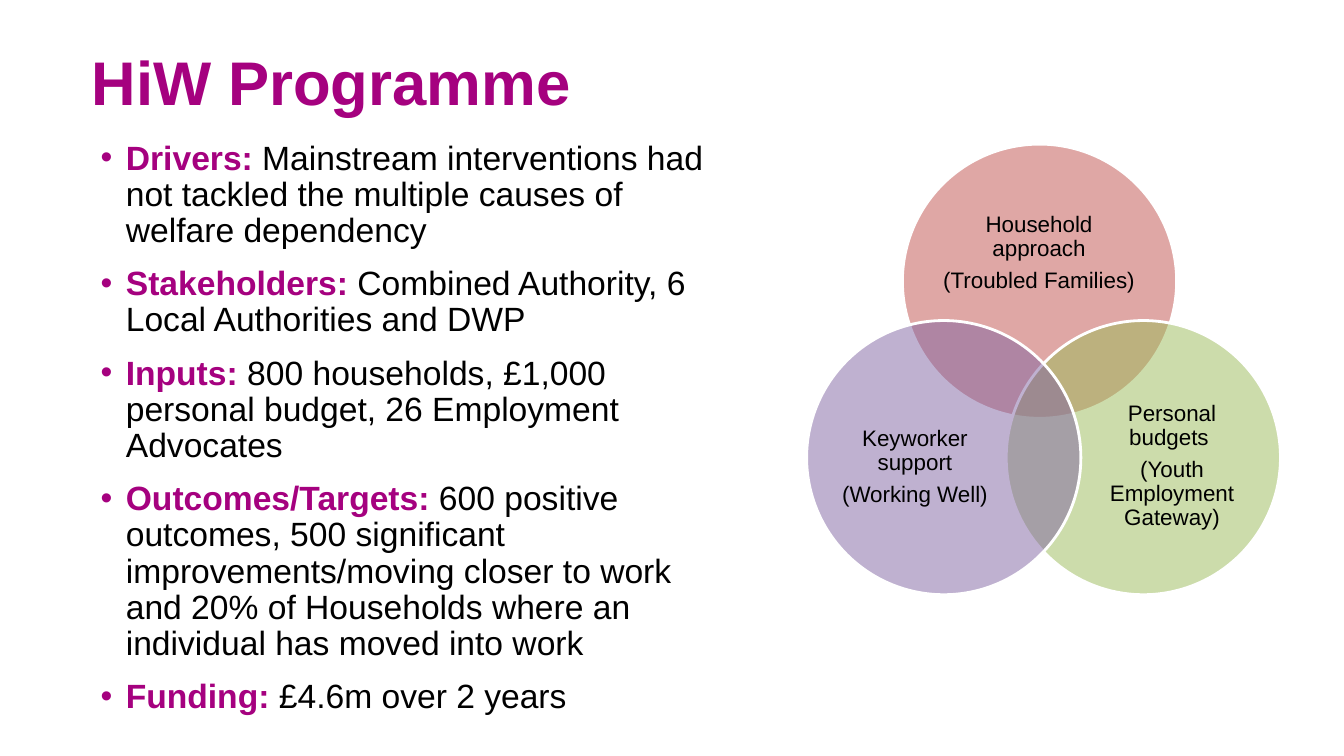
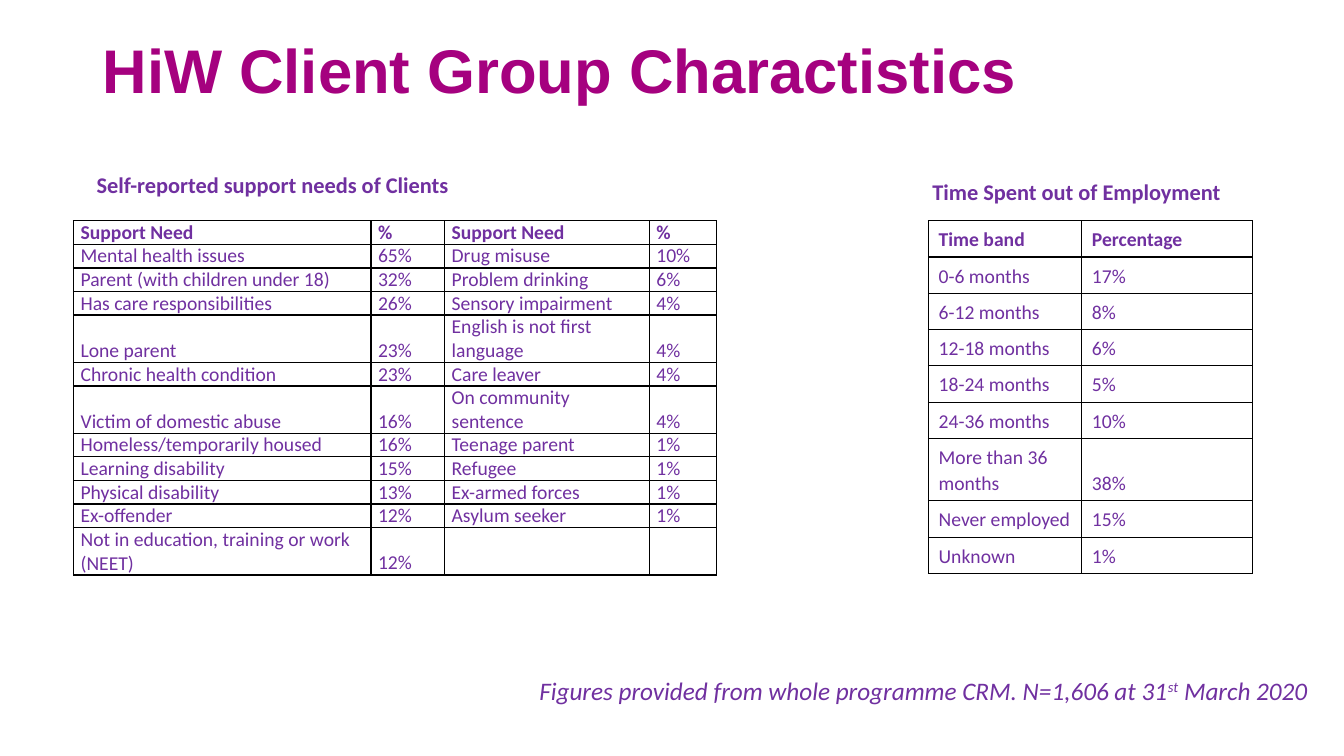
from dataclasses import dataclass

from lxml import etree
from pptx import Presentation
from pptx.dml.color import RGBColor
from pptx.enum.shapes import MSO_SHAPE
from pptx.enum.text import MSO_ANCHOR, PP_ALIGN
from pptx.oxml.ns import qn
from pptx.util import Inches, Pt

OVAL = MSO_SHAPE.OVAL
TOP, MIDDLE, BOTTOM = MSO_ANCHOR.TOP, MSO_ANCHOR.MIDDLE, MSO_ANCHOR.BOTTOM
LEFT, CENTER = PP_ALIGN.LEFT, PP_ALIGN.CENTER


@dataclass(frozen=True)
class Theme:
    magenta: str = "A5017F"
    purple: str = "7030A0"
    black: str = "000000"
    white: str = "FFFFFF"
    red_circle: str = "C0504D"
    green_circle: str = "9BBB59"
    violet_circle: str = "8064A2"
    main_font: str = "Arial"
    data_font: str = "Calibri"
    title_size: int = 44
    body_size: int = 24
    note_size: int = 18
    label_size: int = 16
    cell_size: int = 14


THEME = Theme()

PROGRAMME_POINTS = [
    ("Drivers: ", "Mainstream interventions had not tackled the multiple causes "
                  "of welfare dependency"),
    ("Stakeholders: ", "Combined Authority, 6 Local Authorities and DWP"),
    ("Inputs: ", "800 households, £1,000 personal budget, 26 Employment Advocates"),
    ("Outcomes/Targets: ", "600 positive outcomes, 500 significant improvements/moving "
                           "closer to work and 20% of Households where an individual "
                           "has moved into work"),
    ("Funding: ", "£4.6m over 2 years"),
]

CIRCLE_SIZE = 2.72
# Circle left and top, colour, label box, label paragraphs
VENN = [
    (8.95, 1.43, THEME.red_circle, (9.31, 1.9, 1.99, 1.22),
     ["Household approach", "(Troubled Families)"]),
    (9.98, 3.18, THEME.green_circle, (10.81, 3.88, 1.63, 1.49),
     ["Personal budgets ", "(Youth Employment Gateway)"]),
    (8, 3.18, THEME.violet_circle, (8.26, 3.89, 1.63, 1.49),
     ["Keyworker support", "(Working Well)"]),
]

SUPPORT_NEEDS = [
    ("Support Need", "%", "Support Need", "%"),
    ("Mental health issues", "65%", "Drug misuse", "10%"),
    ("Parent (with children under 18)", "32%", "Problem drinking", "6%"),
    ("Has care responsibilities", "26%", "Sensory impairment", "4%"),
    ("Lone parent", "23%", "English is not first language", "4%"),
    ("Chronic health condition", "23%", "Care leaver", "4%"),
    ("Victim of domestic abuse", "16%", "On community sentence", "4%"),
    ("Homeless/temporarily housed", "16%", "Teenage parent", "1%"),
    ("Learning disability", "15%", "Refugee", "1%"),
    ("Physical disability", "13%", "Ex-armed forces", "1%"),
    ("Ex-offender", "12%", "Asylum seeker", "1%"),
    ("Not in education, training or work (NEET)", "12%", "", ""),
]

TIME_BANDS = [
    ("Time band", "Percentage"),
    ("0-6 months", "17%"),
    ("6-12 months", "8%"),
    ("12-18 months", "6%"),
    ("18-24 months", "5%"),
    ("24-36 months", "10%"),
    ("More than 36 months", "38%"),
    ("Never employed", "15%"),
    ("Unknown", "1%"),
]


def style_font(font, name, size, color, bold=False, italic=False):
    font.name = name
    font.size = Pt(size)
    font.color.rgb = RGBColor.from_string(color)
    font.bold = bold
    font.italic = italic


def add_text_frame(slide, box, anchor=TOP, inset=None):
    frame = slide.shapes.add_textbox(*map(Inches, box)).text_frame
    frame.word_wrap = True
    frame.vertical_anchor = anchor
    if inset is not None:
        set_margins(frame, inset, inset)
    return frame


def set_margins(holder, side, end):
    holder.margin_left = holder.margin_right = Inches(side)
    holder.margin_top = holder.margin_bottom = Inches(end)


def add_paragraphs(frame, texts):
    """Yield one paragraph per text, starting with the frame's own."""
    for index, text in enumerate(texts):
        paragraph = frame.add_paragraph() if index else frame.paragraphs[0]
        paragraph.text = text
        yield paragraph


def add_title(slide, text, box):
    frame = add_text_frame(slide, box, MIDDLE)
    frame.text = text
    paragraph = frame.paragraphs[0]
    paragraph.line_spacing = 0.9
    style_font(paragraph.runs[0].font, THEME.main_font, THEME.title_size,
               THEME.magenta, bold=True)


def add_bullet(paragraph, color):
    properties = paragraph._p.get_or_add_pPr()
    properties.set("marL", str(Inches(0.25)))
    properties.set("indent", str(Inches(-0.25)))
    bullet_color = etree.SubElement(properties, qn("a:buClr"))
    etree.SubElement(bullet_color, qn("a:srgbClr"), val=color)
    etree.SubElement(properties, qn("a:buFont"), typeface=THEME.main_font)
    etree.SubElement(properties, qn("a:buChar"), char="•")


def add_points(slide, points, box):
    frame = add_text_frame(slide, box)
    headings = [heading for heading, _ in points]
    for index, paragraph in enumerate(add_paragraphs(frame, headings)):
        add_bullet(paragraph, THEME.magenta)
        paragraph.line_spacing = 0.9
        paragraph.space_before = Pt(6 if index else 0)
        paragraph.space_after = Pt(6)
        detail = paragraph.add_run()
        detail.text = points[index][1]
        style_font(paragraph.runs[0].font, THEME.main_font, THEME.body_size,
                   THEME.magenta, bold=True)
        style_font(detail.font, THEME.main_font, THEME.body_size, THEME.black)


def add_venn_circle(slide, left, top, color):
    circle = slide.shapes.add_shape(
        OVAL, *map(Inches, (left, top, CIRCLE_SIZE, CIRCLE_SIZE)))
    circle.shadow.inherit = False
    circle.fill.solid()
    circle.fill.fore_color.rgb = RGBColor.from_string(color)
    fill_color = circle._element.spPr.find(qn("a:solidFill"))[0]
    etree.SubElement(fill_color, qn("a:alpha"), val="50000")
    circle.line.color.rgb = RGBColor.from_string(THEME.white)
    circle.line.width = Pt(2)


def add_venn_label(slide, texts, box):
    frame = add_text_frame(slide, box, MIDDLE, inset=0)
    for paragraph in add_paragraphs(frame, texts):
        paragraph.alignment = CENTER
        paragraph.line_spacing = 0.9
        paragraph.space_after = Pt(5.6)
        style_font(paragraph.runs[0].font, THEME.main_font, THEME.label_size,
                   THEME.black)


def add_caption(slide, text, box, line_spacing=1.0):
    frame = add_text_frame(slide, box)
    frame.text = text
    paragraph = frame.paragraphs[0]
    paragraph.line_spacing = line_spacing
    style_font(paragraph.runs[0].font, THEME.data_font, THEME.label_size,
               THEME.purple, bold=True)


def add_source_note(slide, parts, box):
    """Write the parts in one line, raising every second part."""
    paragraph = add_text_frame(slide, box).paragraphs[0]
    paragraph.alignment = LEFT
    for index, text in enumerate(parts):
        run = paragraph.add_run()
        run.text = text
        style_font(run.font, THEME.data_font, THEME.note_size, THEME.purple,
                   italic=True)
        if index % 2:
            run._r.get_or_add_rPr().set("baseline", "30000")


def set_borders(cell):
    properties = cell._tc.get_or_add_tcPr()
    for index, side in enumerate(("lnL", "lnR", "lnT", "lnB")):
        border = etree.Element(qn(f"a:{side}"), w=str(Pt(1)))
        fill = etree.SubElement(border, qn("a:solidFill"))
        etree.SubElement(fill, qn("a:srgbClr"), val=THEME.black)
        properties.insert(index, border)


def add_data_table(slide, rows, left, top, widths, row_height, tall_rows,
                   margins, line_spacing, anchor_for):
    """tall_rows maps row numbers to heights; anchor_for(row, column) places text."""
    heights = [tall_rows.get(index, row_height) for index in range(len(rows))]
    table = slide.shapes.add_table(
        len(rows), len(widths),
        *map(Inches, (left, top, sum(widths), sum(heights)))).table
    table.first_row = table.horz_banding = False
    for column, width in zip(table.columns, widths):
        column.width = Inches(width)
    for row, height in zip(table.rows, heights):
        row.height = Inches(height)
    for row_index, texts in enumerate(rows):
        for column_index, text in enumerate(texts):
            cell = table.cell(row_index, column_index)
            cell.fill.background()
            set_borders(cell)
            set_margins(cell, *margins)
            cell.vertical_anchor = anchor_for(row_index, column_index)
            cell.text_frame.text = text
            paragraph = cell.text_frame.paragraphs[0]
            paragraph.line_spacing = line_spacing
            style_font(paragraph.font, THEME.data_font, THEME.cell_size, THEME.purple)
            for run in paragraph.runs:
                style_font(run.font, THEME.data_font, THEME.cell_size,
                           THEME.purple, bold=row_index == 0)


def build_programme_slide(slide):
    add_title(slide, "HiW Programme", (0.81, 0.12, 11.61, 1.45))
    add_points(slide, PROGRAMME_POINTS, (0.9, 1.35, 6.38, 5.9))
    for left, top, color, label_box, label in VENN:
        add_venn_circle(slide, left, top, color)
        add_venn_label(slide, label, label_box)


def build_clients_slide(slide):
    add_title(slide, "HiW Client Group Charactistics", (0.92, 0, 11.5, 1.45))
    add_data_table(slide, SUPPORT_NEEDS, 0.73, 2.19, (2.95, 0.73, 2.03, 0.67),
                   0.23, {4: 0.47, 6: 0.47, 11: 0.47}, (0.07, 0), 1.0,
                   lambda row, column: BOTTOM)
    add_data_table(slide, TIME_BANDS, 9.21, 2.19, (1.52, 1.69),
                   0.36, {6: 0.62}, (0.1, 0.05), 1.1,
                   lambda row, column: BOTTOM if row >= 6 and column else TOP)
    add_caption(slide, "Time Spent out of Employment", (9.15, 1.69, 3.3, 0.38), 1.1)
    add_caption(slide, "Self-reported support needs of Clients",
                (0.86, 1.65, 4, 0.37))
    add_source_note(
        slide,
        ("Figures provided from whole programme CRM. N=1,606 at 31", "st",
         " March 2020"),
        (5.25, 6.65, 8.08, 0.4))


def main():
    deck = Presentation()
    deck.slide_width, deck.slide_height = Inches(13.33), Inches(7.5)
    blank = deck.slide_layouts[6]
    for build in (build_programme_slide, build_clients_slide):
        build(deck.slides.add_slide(blank))
    deck.save("out.pptx")


if __name__ == "__main__":
    main()
